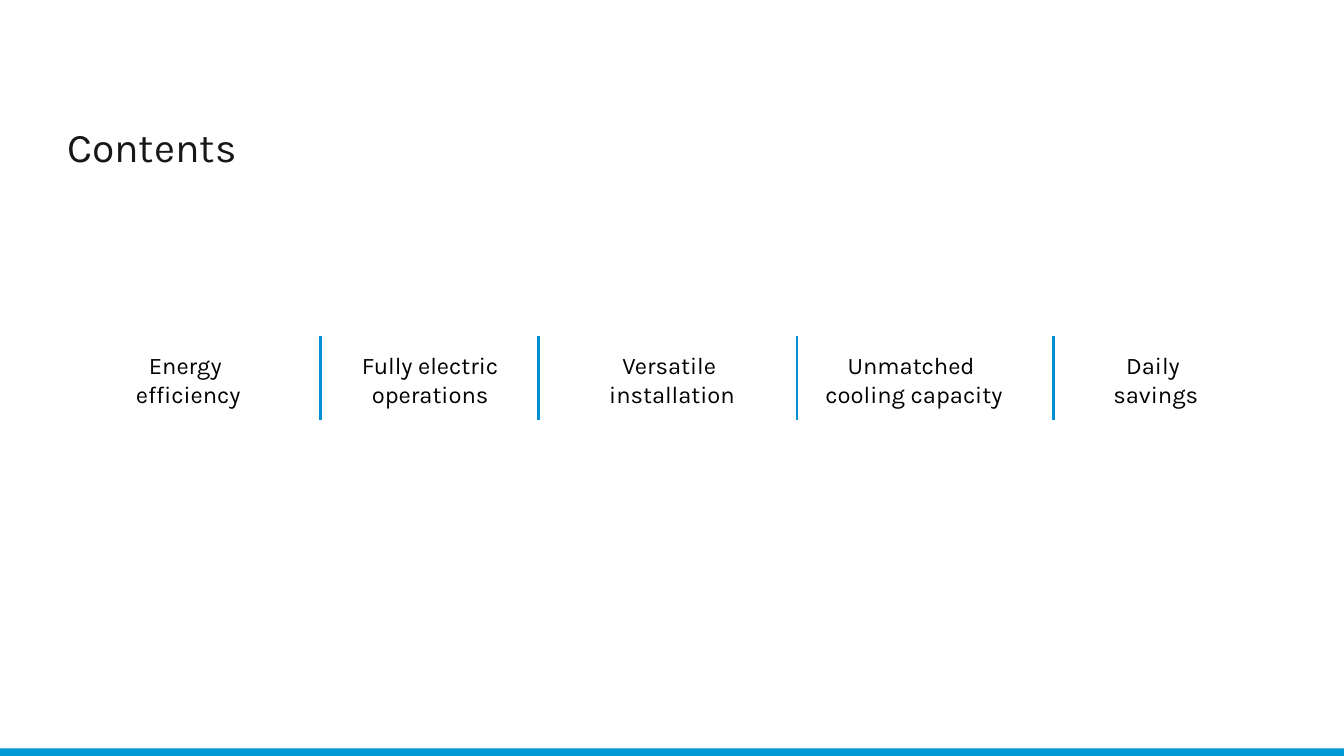
from dataclasses import dataclass

import pptx
import pptx.dml.color
import pptx.enum.shapes
import pptx.enum.text
import pptx.oxml
import pptx.oxml.ns
import pptx.slide
import pptx.util

BAR_BLUE = pptx.dml.color.RGBColor(0x00, 0x98, 0xD7)
DIVIDER_BLUE = pptx.dml.color.RGBColor(0x00, 0x90, 0xD2)
HEADING_INK = pptx.dml.color.RGBColor(0x15, 0x17, 0x18)
BLACK = pptx.dml.color.RGBColor(0x00, 0x00, 0x00)
FONT = "Karla"

WIDTH = pptx.util.Inches(21.99)
HEIGHT = pptx.util.Inches(12.37)
MARGIN = WIDTH * 0.05
CONTENT_WIDTH = WIDTH - 2 * MARGIN
TOPIC_TOP = HEIGHT * 0.464
TOPIC_HEIGHT = HEIGHT * 0.074
DIVIDER_TOP = HEIGHT * 0.445
DIVIDER_BOTTOM = HEIGHT * 0.555
BAR_TOP = HEIGHT * 0.99


@dataclass(frozen=True)
class Label:
    text: str
    left: float
    top: float
    width: float
    height: float
    size: int
    color: pptx.dml.color.RGBColor
    align: pptx.enum.text.PP_ALIGN


TOPICS = (
    "Energy \nefficiency",
    "Fully electric operations",
    "Versatile \ninstallation",
    "Unmatched \vcooling capacity",
    "Daily \vsavings",
)
DIVIDER_SHARES = (0.2383, 0.4006, 0.593, 0.784)


def add_label(slide: pptx.slide.Slide, label: Label) -> None:
    box = slide.shapes.add_textbox(
        int(label.left), int(label.top), int(label.width), int(label.height))
    frame = box.text_frame
    frame.word_wrap = True
    frame.margin_left = frame.margin_right = 0
    frame.margin_top = frame.margin_bottom = 0
    frame.text = label.text
    for paragraph in frame.paragraphs:
        paragraph.alignment = label.align
        for run in paragraph.runs:
            run.font.name = FONT
            run.font.size = pptx.util.Pt(label.size)
            run.font.color.rgb = label.color


def add_divider(slide: pptx.slide.Slide, share: float) -> None:
    x = int(WIDTH * share)
    divider = slide.shapes.add_connector(
        pptx.enum.shapes.MSO_CONNECTOR.STRAIGHT,
        x, int(DIVIDER_TOP), x, int(DIVIDER_BOTTOM))
    divider.line.color.rgb = DIVIDER_BLUE
    divider.line.width = pptx.util.Pt(3)
    divider._element.spPr.append(
        pptx.oxml.parse_xml(f"<a:effectLst {pptx.oxml.ns.nsdecls('a')}/>"))


def add_footer_bar(slide: pptx.slide.Slide) -> None:
    bar = slide.shapes.add_shape(
        pptx.enum.shapes.MSO_SHAPE.RECTANGLE,
        0, int(BAR_TOP), WIDTH, int(HEIGHT - BAR_TOP))
    bar.shadow.inherit = False
    bar.fill.solid()
    bar.fill.fore_color.rgb = BAR_BLUE
    bar.line.fill.background()


def main() -> None:
    deck = pptx.Presentation()
    deck.slide_width = WIDTH
    deck.slide_height = HEIGHT
    slide = deck.slides.add_slide(deck.slide_layouts[6])

    add_footer_bar(slide)
    add_label(slide, Label(
        "Contents", MARGIN, HEIGHT * 0.161, CONTENT_WIDTH / 2, HEIGHT * 0.084,
        48, HEADING_INK, pptx.enum.text.PP_ALIGN.LEFT))

    column = CONTENT_WIDTH / len(TOPICS)
    for index, topic in enumerate(TOPICS):
        add_label(slide, Label(
            topic, MARGIN + index * column, TOPIC_TOP, column, TOPIC_HEIGHT,
            28, BLACK, pptx.enum.text.PP_ALIGN.CENTER))
    for share in DIVIDER_SHARES:
        add_divider(slide, share)

    deck.save("out.pptx")


if __name__ == "__main__":
    main()
